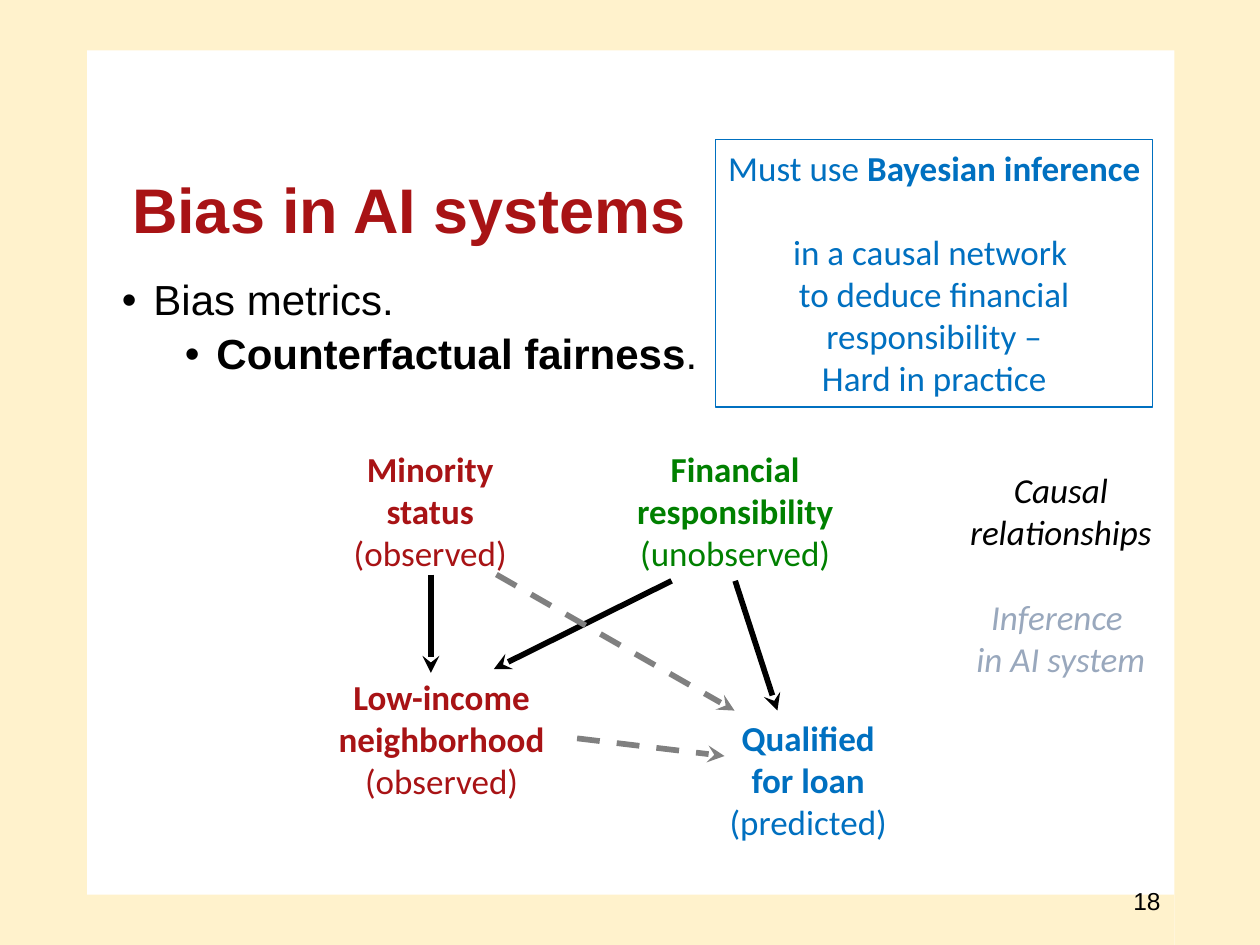
from copy import deepcopy
from typing import NamedTuple

from lxml import etree
from pptx import Presentation
from pptx import util as u
from pptx.dml.color import RGBColor
from pptx.enum import dml, shapes, text
from pptx.oxml.ns import qn

COLORS = {"cream": "FFF2CC", "red": "A81315", "green": "008000", "blue": "0070C0",
          "black": "000000", "gray": "808080", "slate": "99A8BD"}
CENTER = text.PP_ALIGN.CENTER


class Area(NamedTuple):
    left: float
    top: float
    width: float
    height: float


class Node(NamedTuple):
    area: Area
    name: str
    state: str
    color: str


class Arrow(NamedTuple):
    start: tuple[float, float]
    end: tuple[float, float]
    inferred: bool = False
    source: str = ""  # node whose bottom middle the arrow leaves


BANDS = [Area(0, 0, 0.69, 7.5), Area(9.32, 0, 0.69, 7.5),
         Area(0.69, 0, 8.67, 0.4), Area(0.65, 7.1, 8.67, 0.4)]
NODES = [
    Node(Area(2.58, 3.5, 1.67, 1.11), "Minority\nstatus\n", "(observed)", "red"),
    Node(Area(4.75, 3.5, 2.17, 1.11), "Financial\nresponsibility\n", "(unobserved)", "green"),
    Node(Area(2.42, 5.31, 2.17, 1.11), "Low-income\nneighborhood\n", "(observed)", "red"),
    Node(Area(5.33, 5.64, 2.17, 1.11), "Qualified\nfor loan\n", "(predicted)", "blue"),
]
ARROWS = [
    Arrow((3.42, 4.56), (3.42, 5.34)),
    Arrow((5.83, 4.58), (6.17, 5.64), source="Financial\nresponsibility\n"),
    Arrow((5.33, 4.61), (3.92, 5.31)),
    Arrow((3.94, 4.56), (5.83, 5.64), inferred=True),
    Arrow((4.58, 5.86), (5.75, 6), inferred=True),
]


def rgb(name: str) -> RGBColor:
    return RGBColor.from_string(COLORS[name])


def inches(values) -> list:
    return [u.Inches(value) for value in values]


def add_box(page, area: Area, anchor=text.MSO_ANCHOR.TOP):
    box = page.shapes.add_textbox(*inches(area))
    box.text_frame.word_wrap = True
    box.text_frame.vertical_anchor = anchor
    return box


def next_para(box, align=None):
    """Return the empty first paragraph, or a new one."""
    frame = box.text_frame
    para = frame.paragraphs[0]
    if para.runs:
        para = frame.add_paragraph()
    para.alignment = align
    return para


def add_text(para, words: str, *, size: float = 20, color: str = "black",
             font: str = "Calibri", bold: bool = False, italic: bool = False) -> None:
    """Add formatted text; each newline becomes a line break of the same format."""
    for index, line in enumerate(words.split("\n")):
        if index:
            para.add_line_break()
            para._p[-1].append(deepcopy(span._r.rPr))
        if line:
            span = para.add_run()
            span.text = line
            span.font.name = font
            span.font.size = u.Pt(size)
            span.font.bold = bold
            span.font.italic = italic
            span.font.color.rgb = rgb(color)


def add_band(page, area: Area) -> None:
    band = page.shapes.add_shape(shapes.MSO_SHAPE.RECTANGLE, *inches(area))
    band.shadow.inherit = False
    band.fill.solid()
    band.fill.fore_color.rgb = rgb("cream")
    band.line.fill.background()


def add_node(page, node: Node):
    box = add_box(page, node.area)
    para = next_para(box, CENTER)
    add_text(para, node.name, color=node.color, bold=True)
    add_text(para, node.state, color=node.color)
    return box


def add_arrow(page, arrow: Arrow, nodes: dict) -> None:
    line = page.shapes.add_connector(shapes.MSO_CONNECTOR.STRAIGHT,
                                     *inches(arrow.start + arrow.end))
    if arrow.source:
        line.begin_connect(nodes[arrow.source], 2)
    line.line.width = u.Pt(3.25)
    line.line.color.rgb = rgb("gray" if arrow.inferred else "black")
    if arrow.inferred:
        line.line.dash_style = dml.MSO_LINE.DASH
    etree.SubElement(line.line._get_or_add_ln(), qn("a:tailEnd"), type="stealth")
    etree.SubElement(line._element.spPr, qn("a:effectLst"))


def add_bullet(box, level: int, before: float):
    para = next_para(box)
    para.level = level
    para.line_spacing = 0.9
    para.space_before = u.Pt(before)
    props = para._p.get_or_add_pPr()
    props.set("marL", str(u.Inches(0.25 + 0.5 * level)))
    props.set("indent", str(u.Inches(-0.25)))
    etree.SubElement(props, qn("a:buFont"), typeface="Arial")
    etree.SubElement(props, qn("a:buChar"), char="•")
    return para


def main() -> None:
    deck = Presentation()
    deck.slide_width, deck.slide_height = inches((10, 7.5))
    page = deck.slides.add_slide(deck.slide_layouts[6])

    # Frame, page number and title
    for area in BANDS:
        add_band(page, area)
    number = add_box(page, Area(7.06, 6.95, 2.25, 0.4), text.MSO_ANCHOR.MIDDLE)
    add_text(next_para(number, text.PP_ALIGN.RIGHT), "18", size=14, font="Arial")
    title = add_box(page, Area(0.95, 0.75, 9, 1.25), text.MSO_ANCHOR.BOTTOM)
    add_text(next_para(title), "Bias in AI systems", size=36, color="red",
             font="Arial", bold=True)

    # Causal network
    nodes = {node.name: add_node(page, node) for node in NODES}
    for arrow in ARROWS:
        add_arrow(page, arrow, nodes)

    # Legend
    legend = add_box(page, Area(7.42, 3.67, 2, 1.78))
    add_text(next_para(legend, CENTER), "Causal relationships", italic=True)
    para = next_para(legend, CENTER)
    para.space_before = u.Pt(24.4)
    add_text(para, "Inference \nin AI system", color="slate", italic=True)

    # Callout
    callout = add_box(page, Area(5.68, 1.11, 3.47, 2.12))
    callout.line.color.rgb = rgb("blue")
    callout.line.width = u.Pt(0.75)
    para = next_para(callout, CENTER)
    add_text(para, "Must use ", color="blue")
    add_text(para, "Bayesian inference \n", color="blue", bold=True)
    add_text(para, "in a causal network \nto deduce financial responsibility –", color="blue")
    add_text(next_para(callout, CENTER), "Hard in practice", color="blue")

    # Bullets
    body = add_box(page, Area(0.87, 2.17, 9, 5.5))
    add_text(add_bullet(body, 0, 10), "Bias metrics.", size=24, font="Arial")
    para = add_bullet(body, 1, 5)
    add_text(para, "Counterfactual fairness", size=24, font="Arial", bold=True)
    add_text(para, ".", size=24, font="Arial")

    deck.save("out.pptx")


if __name__ == "__main__":
    main()
